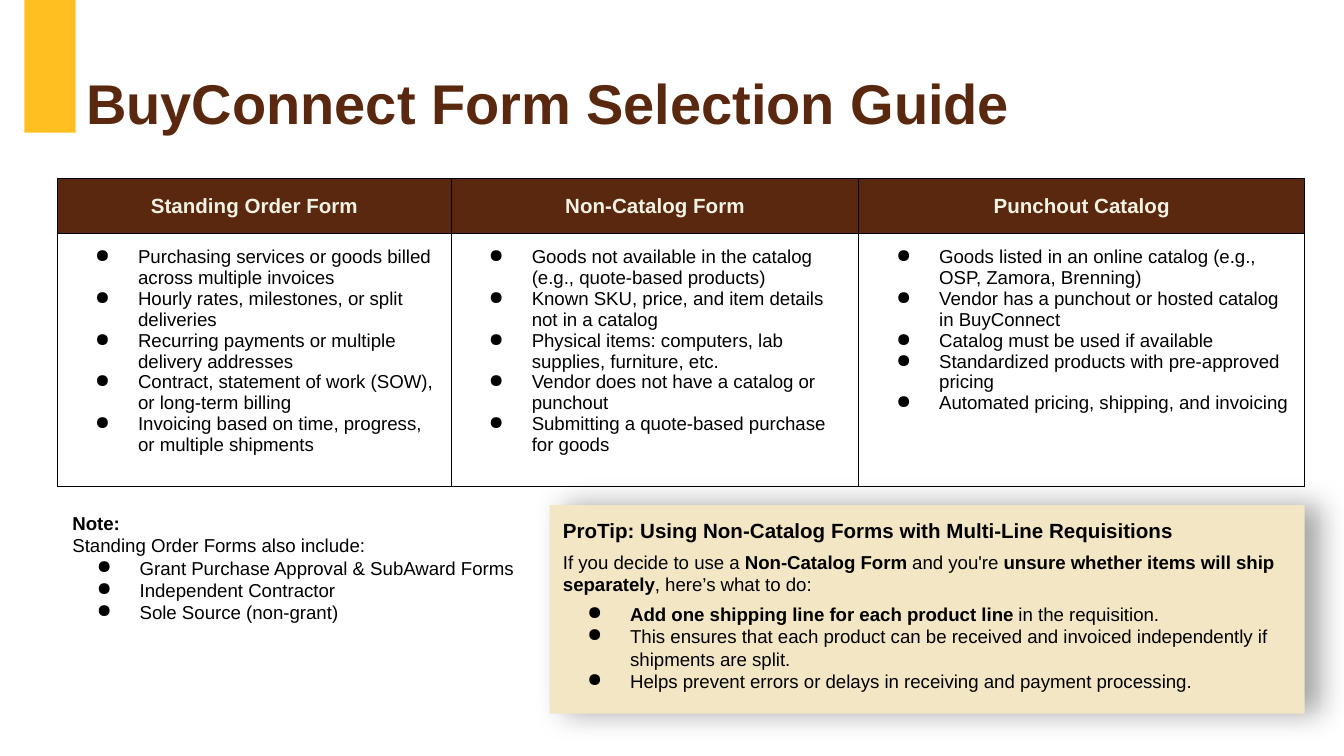
from lxml.etree import SubElement
from pptx import Presentation
from pptx.dml.color import RGBColor
from pptx.enum.shapes import MSO_SHAPE as Shape
from pptx.enum.text import MSO_ANCHOR as Anchor, PP_ALIGN as Align
from pptx.oxml.ns import qn
from pptx.util import Cm, Pt

BROWN, GOLD, SAND, CREAM, BLACK = "59280F", "FFBF21", "F2E6C4", "F1F2E3", "000000"
INSET = 0.25

CATALOG = [
    ("Standing Order Form", 7.44, [
        "Purchasing services or goods billed across multiple invoices",
        "Hourly rates, milestones, or split deliveries",
        "Recurring payments or multiple delivery addresses",
        "Contract, statement of work (SOW), or long-term billing",
        "Invoicing based on time, progress, or multiple shipments",
    ]),
    ("Non-Catalog Form", 7.7, [
        "Goods not available in the catalog (e.g., quote-based products)",
        "Known SKU, price, and item details not in a catalog",
        "Physical items: computers, lab supplies, furniture, etc.",
        "Vendor does not have a catalog or punchout",
        "Submitting a quote-based purchase for goods",
    ]),
    ("Punchout Catalog", 8.43, [
        "Goods listed in an online catalog (e.g., OSP, Zamora, Brenning)",
        "Vendor has a punchout or hosted catalog in BuyConnect",
        "Catalog must be used if available",
        "Standardized products with pre-approved pricing",
        "Automated pricing, shipping, and invoicing",
    ]),
]


def color(value):
    return RGBColor.from_string(value)


def apply(target, values):
    for name, value in values.items():
        setattr(target, name, value)


def margins(across, down):
    return {"margin_left": Cm(across), "margin_right": Cm(across),
            "margin_top": Cm(down), "margin_bottom": Cm(down)}


def place(left, top, width, height):
    return [Cm(value) for value in (left, top, width, height)]


def add_solid(parent, tag, value):
    holder = SubElement(parent, qn(tag))
    return SubElement(holder, qn("a:srgbClr"), val=value)


def add_bullet(para):
    props = para._p.get_or_add_pPr()
    props.set("marL", str(Cm(1.27)))
    props.set("indent", str(Cm(-0.81)))
    add_solid(props, "a:buClr", BLACK)
    SubElement(props, qn("a:buChar"), char="●")


def line(text, size=10, ink=BLACK, bullet=False, **layout):
    return {"text": text, "size": size, "ink": ink, "bullet": bullet, "layout": layout}


def bullets(texts):
    return [line(text, bullet=True) for text in texts]


def write(frame, lines):
    frame.word_wrap = True
    for index, item in enumerate(lines):
        para = frame.paragraphs[0] if index == 0 else frame.add_paragraph()
        if item["bullet"]:
            add_bullet(para)
        apply(para, {"alignment": Align.LEFT, **item["layout"]})
        for order, part in enumerate(item["text"].split("**")):
            if part:
                span = para.add_run()
                span.text = part
                apply(span.font, {"name": "Arial", "size": Pt(item["size"]),
                                  "bold": order % 2 == 1})
                span.font.color.rgb = color(item["ink"])


def add_panel(page, box, fill):
    panel = page.shapes.add_shape(Shape.RECTANGLE, *place(*box))
    panel.shadow.inherit = False
    panel.fill.solid()
    panel.fill.fore_color.rgb = color(fill)
    panel.line.fill.background()
    return panel


def add_text(page, box, lines, insets, anchor=Anchor.TOP):
    frame = page.shapes.add_textbox(*place(*box)).text_frame
    apply(frame, {**insets, "vertical_anchor": anchor})
    write(frame, lines)


def add_heading(page, box):
    left, top, width, height = box
    add_panel(page, (left, top, 0.97, 2.51), GOLD)
    title = line("**BuyConnect Form Selection Guide**", 30, BROWN, line_spacing=0.9)
    add_text(page, (left + 0.99, top + 0.43, width - 0.99, height - 0.43),
             [title], margins(0.18, 0.1), Anchor.BOTTOM)


def style_cell(cell, fill, lines):
    props = cell._tc.get_or_add_tcPr()
    for side in ("a:lnL", "a:lnR", "a:lnT", "a:lnB"):
        edge = SubElement(props, qn(side), w=str(Pt(0.75)))
        add_solid(edge, "a:solidFill", BLACK)
    if fill:
        cell.fill.solid()
        cell.fill.fore_color.rgb = color(fill)
    else:
        cell.fill.background()
    apply(cell, margins(INSET, INSET))
    write(cell.text_frame, lines)


def add_catalog(page, box):
    table = page.shapes.add_table(2, len(CATALOG), *place(*box)).table
    apply(table, {"first_row": False, "horz_banding": False})
    header_height = 1.04
    table.rows[0].height = Cm(header_height)
    table.rows[1].height = Cm(box[3] - header_height)
    for index, (name, width, uses) in enumerate(CATALOG):
        table.columns[index].width = Cm(width)
        header = line(f"**{name}**", 11, CREAM, alignment=Align.CENTER, line_spacing=1.15)
        style_cell(table.cell(0, index), BROWN, [header])
        style_cell(table.cell(1, index), None, bullets(uses))


def add_note(page, box):
    lines = [line("**Note:**"), line("Standing Order Forms also include:")]
    lines += bullets(["Grant Purchase Approval & SubAward Forms",
                      "Independent Contractor", "Sole Source (non-grant)"])
    add_text(page, box, lines, margins(INSET, INSET))


def add_tip(page, box):
    panel = add_panel(page, box, SAND)
    effects = panel._element.spPr.find(qn("a:effectLst"))
    shadow = SubElement(effects, qn("a:outerShdw"), blurRad=str(Pt(15.8)),
                        dist=str(Pt(7.5)), dir="0", algn="bl", rotWithShape="0")
    tint = SubElement(shadow, qn("a:srgbClr"), val=BLACK)
    SubElement(tint, qn("a:alpha"), val="37000")
    apply(panel.text_frame, {**margins(INSET, INSET), "vertical_anchor": Anchor.TOP})
    write(panel.text_frame, [
        line("**ProTip: Using Non-Catalog Forms with Multi-Line Requisitions**", 11),
        line("If you decide to use a **Non-Catalog Form** and you're "
             "**unsure whether items will ship separately**, here’s what to do:",
             space_before=Pt(4)),
        line("**Add one shipping line for each product line** in the requisition.",
             bullet=True, space_before=Pt(4)),
        *bullets(["This ensures that each product can be received and invoiced "
                  "independently if shipments are split.",
                  "Helps prevent errors or delays in receiving and payment processing."]),
    ])


def main():
    deck = Presentation()
    apply(deck, {"slide_width": Cm(25.4), "slide_height": Cm(14.29)})
    page = deck.slides.add_slide(deck.slide_layouts[6])
    add_heading(page, (0.46, 0, 24.74, 2.69))
    add_catalog(page, (1.09, 3.38, 23.57, 5.82))
    add_note(page, (1.12, 9.42, 9.93, 2.64))
    add_tip(page, (10.39, 9.55, 14.27, 3.94))
    deck.save("out.pptx")


if __name__ == "__main__":
    main()
